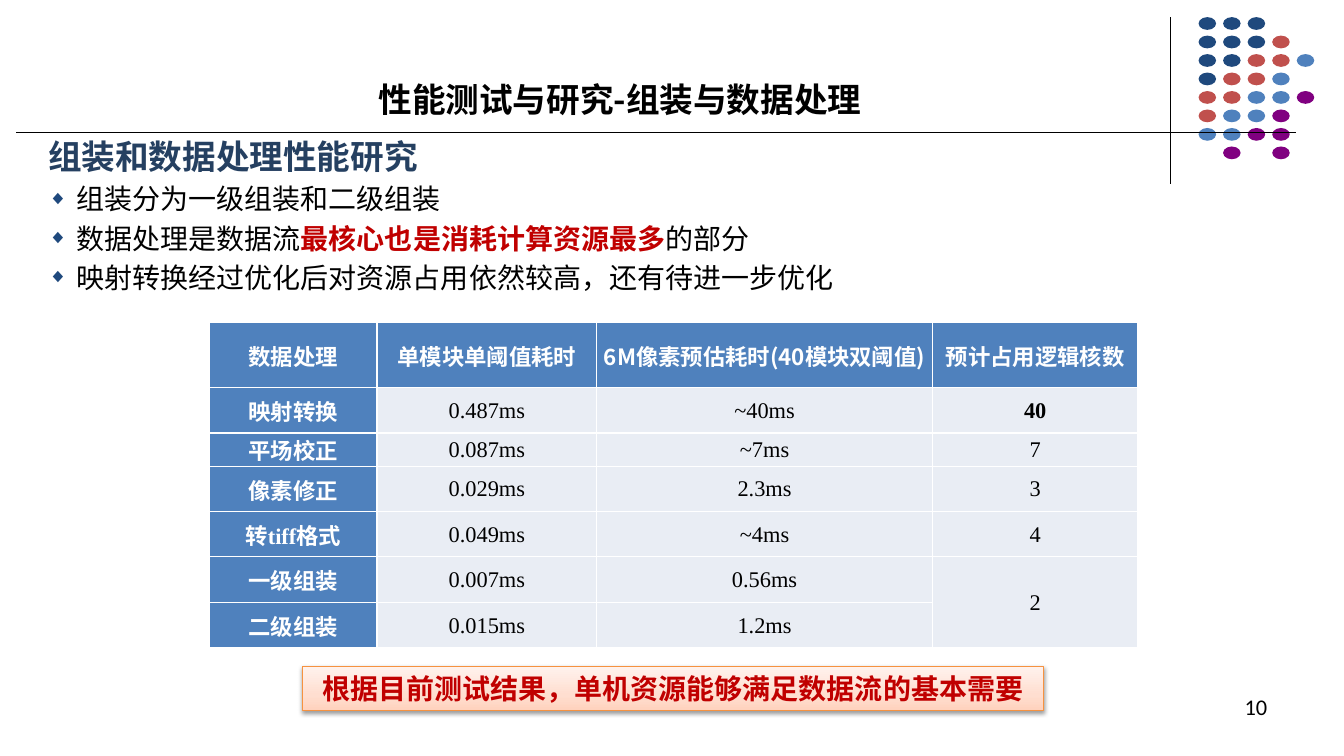
from collections import namedtuple

from lxml import etree
from pptx import Presentation
from pptx.dml.color import RGBColor
from pptx.enum.shapes import MSO_CONNECTOR as Connector, MSO_SHAPE as Shape
from pptx.enum.text import MSO_ANCHOR as Anchor, PP_ALIGN as Align
from pptx.oxml import parse_xml
from pptx.oxml.ns import nsdecls, qn
from pptx.util import Inches, Pt

COLORS = {
    "black": "000000", "white": "FFFFFF", "navy": "1F497D", "heading": "254061",
    "blue": "4F81BD", "red": "C0504D", "purple": "800080", "alert": "C00000",
    "cell": "E9EDF4", "orange": "F69240",
    "glow_low": "FFD2BD", "glow_mid": "FFDED0", "glow_high": "FFF2ED",
}
SERIF, SANS, PLAIN = "Times New Roman", "Noto Sans CJK SC", "Calibri"
WIDTH, HEIGHT = Inches(13.333), Inches(7.5)
Box = namedtuple("Box", "left top width height")

# One letter per dot, a blank where the grid has none
DOT_ROWS = ["nnn", "nnnr", "nnrrb", "nrrb", "rrbbp", "rbbp", "bbpp", " p p"]
DOT_COLORS = {"n": "navy", "r": "red", "b": "blue", "p": "purple"}

BULLETS = [
    [("组装分为一级组装和二级组装", False)],
    [("数据处理是数据流", False), ("最核心也是消耗计算资源最多", True), ("的部分", False)],
    [("映射转换经过优化后对资源占用依然较高，还有待进一步优化", False)],
]
COLUMN_WEIGHTS = [1.66, 2.18, 3.33, 2.04]
# The header row holds two lines
ROW_WEIGHTS = [0.65, 0.45, 0.33, 0.45, 0.45, 0.45, 0.45]
TIMINGS = [
    ["数据处理", "单模块单阈值耗时", "6M像素预估耗时(40模块双阈值)", "预计占用逻辑核数"],
    ["映射转换", "0.487ms", "~40ms", "40"],
    ["平场校正", "0.087ms", "~7ms", "7"],
    ["像素修正", "0.029ms", "2.3ms", "3"],
    ["转tiff格式", "0.049ms", "~4ms", "4"],
    ["一级组装", "0.007ms", "0.56ms", "2"],
    ["二级组装", "0.015ms", "1.2ms", ""],
]


def share(left, top, width, height):
    """Box given in percent of the slide's width and height."""
    return Box(int(WIDTH * left / 100), int(HEIGHT * top / 100),
               int(WIDTH * width / 100), int(HEIGHT * height / 100))


def rgb(name):
    return RGBColor.from_string(COLORS[name])


def style(span, size, color="black", bold=False, latin=SERIF):
    font = span.font
    font.size, font.bold, font.name = Pt(size), bold, latin
    font.color.rgb = rgb(color)
    east_asian = etree.SubElement(span._r.get_or_add_rPr(), qn("a:ea"))
    east_asian.set("typeface", SANS)


def write(para, text, align, *args, **kwargs):
    para.text = text
    para.alignment = align
    for span in para.runs:
        style(span, *args, **kwargs)


def text_frame(page, box, anchor=Anchor.TOP):
    frame = page.shapes.add_textbox(*box).text_frame
    frame.word_wrap = True
    frame.vertical_anchor = anchor
    return frame


def add_rule(page, box):
    line = page.shapes.add_connector(
        Connector.STRAIGHT, box.left, box.top,
        box.left + box.width, box.top + box.height)
    line.line.color.rgb = rgb("black")
    line.line.width = Pt(0.75)
    etree.SubElement(line._element.spPr, qn("a:effectLst"))


def add_dots(page, box):
    dots = page.shapes.add_group_shape().shapes
    for row, letters in enumerate(DOT_ROWS):
        for column, letter in enumerate(letters):
            if letter == " ":
                continue
            dot = dots.add_shape(
                Shape.OVAL,
                int(box.left + box.width * 0.21 * column),
                int(box.top + box.height * 0.13 * row),
                int(box.width * 0.15), int(box.height * 0.09))
            dot.shadow.inherit = False
            dot.fill.solid()
            dot.fill.fore_color.rgb = rgb(DOT_COLORS[letter])
            dot.line.fill.background()


def add_title(page, box):
    frame = text_frame(page, box, Anchor.BOTTOM)
    write(frame.paragraphs[0], "性能测试与研究-组装与数据处理", Align.CENTER,
          24, bold=True, latin=SANS)


def add_bullet(para):
    properties = para._p.get_or_add_pPr()
    properties.set("marL", str(Inches(0.28)))
    properties.set("indent", str(-Inches(0.28)))
    for xml in (f'<a:buClr {nsdecls("a")}><a:srgbClr val="{COLORS["navy"]}"/></a:buClr>',
                f'<a:buSzPct {nsdecls("a")} val="70000"/>',
                f'<a:buFont {nsdecls("a")} typeface="{SERIF}"/>',
                f'<a:buChar {nsdecls("a")} char="◆"/>'):
        properties.append(parse_xml(xml))


def add_body(page, box):
    frame = text_frame(page, box)
    write(frame.paragraphs[0], "组装和数据处理性能研究", Align.JUSTIFY,
          24, "heading", True)
    for parts in BULLETS:
        para = frame.add_paragraph()
        add_bullet(para)
        para.alignment = Align.JUSTIFY
        para.space_before = Pt(4)
        for text, strong in parts:
            span = para.add_run()
            span.text = text
            style(span, 20, "alert" if strong else "black", strong,
                  SANS if strong else SERIF)


def add_borders(cell):
    properties = cell._tc.get_or_add_tcPr()
    for side in ("lnL", "lnR", "lnT", "lnB"):
        properties.append(parse_xml(
            f'<a:{side} {nsdecls("a")} w="12700"><a:solidFill>'
            f'<a:srgbClr val="{COLORS["white"]}"/></a:solidFill></a:{side}>'))


def add_timings(page, box):
    table = page.shapes.add_table(len(TIMINGS), len(COLUMN_WEIGHTS), *box).table
    for column, weight in zip(table.columns, COLUMN_WEIGHTS):
        column.width = int(box.width * weight / sum(COLUMN_WEIGHTS))
    for row, weight in zip(table.rows, ROW_WEIGHTS):
        row.height = int(box.height * weight / sum(ROW_WEIGHTS))
    for r, values in enumerate(TIMINGS):
        for c, value in enumerate(values):
            cell = table.cell(r, c)
            header = r == 0 or c == 0
            add_borders(cell)
            cell.fill.solid()
            cell.fill.fore_color.rgb = rgb("blue" if header else "cell")
            cell.vertical_anchor = Anchor.MIDDLE
            cell.margin_left = cell.margin_right = cell.margin_top = Inches(0.01)
            cell.margin_bottom = 0
            write(cell.text_frame.paragraphs[0], value, Align.CENTER, 16,
                  "white" if header else "black", header or value == "40",
                  SANS if r == 0 and c > 0 else SERIF)
    # Both assembly levels share one core count
    table.cell(5, 3).merge(table.cell(6, 3))


def add_conclusion(page, box):
    banner = page.shapes.add_shape(Shape.RECTANGLE, *box)
    banner.line.color.rgb = rgb("orange")
    banner.line.width = Pt(0.75)
    stops = "".join(
        f'<a:gs pos="{place * 1000}"><a:srgbClr val="{COLORS[name]}"/></a:gs>'
        for place, name in ((0, "glow_low"), (35, "glow_mid"), (100, "glow_high")))
    properties = banner._element.spPr
    properties.find(qn("a:prstGeom")).addnext(parse_xml(
        f'<a:gradFill {nsdecls("a")} rotWithShape="1"><a:gsLst>{stops}</a:gsLst>'
        '<a:lin ang="16200000" scaled="0"/></a:gradFill>'))
    properties.append(parse_xml(
        f'<a:effectLst {nsdecls("a")}><a:outerShdw blurRad="{Pt(3.1)}" dist="{Pt(1.6)}" '
        f'dir="5400000" rotWithShape="0"><a:srgbClr val="{COLORS["black"]}">'
        '<a:alpha val="38000"/></a:srgbClr></a:outerShdw></a:effectLst>'))
    banner.text_frame.word_wrap = True
    write(banner.text_frame.paragraphs[0], "根据目前测试结果，单机资源能够满足数据流的基本需要",
          Align.CENTER, 20, "alert", True)


def add_page_number(page, box):
    write(text_frame(page, box).paragraphs[0], "10", Align.RIGHT, 16, latin=PLAIN)


def main():
    deck = Presentation()
    deck.slide_width, deck.slide_height = WIDTH, HEIGHT
    page = deck.slides.add_slide(deck.slide_layouts[6])
    # Frame: rules and dot grid
    add_rule(page, share(87.08, 2.27, 0, 22.13))
    add_dots(page, share(89.18, 2.27, 8.7, 18.8))
    add_rule(page, share(1.2, 17.47, 95.25, 0))
    # Content
    add_title(page, share(5.1, 5.87, 82.05, 10.53))
    add_body(page, share(2.85, 17.33, 94.35, 25.2))
    add_timings(page, share(15.6, 42.6, 69.08, 43.07))
    add_conclusion(page, share(22.5, 88.13, 55.13, 5.87))
    add_page_number(page, share(71.7, 91.07, 23.33, 6.67))
    deck.save("out.pptx")


if __name__ == "__main__":
    main()
